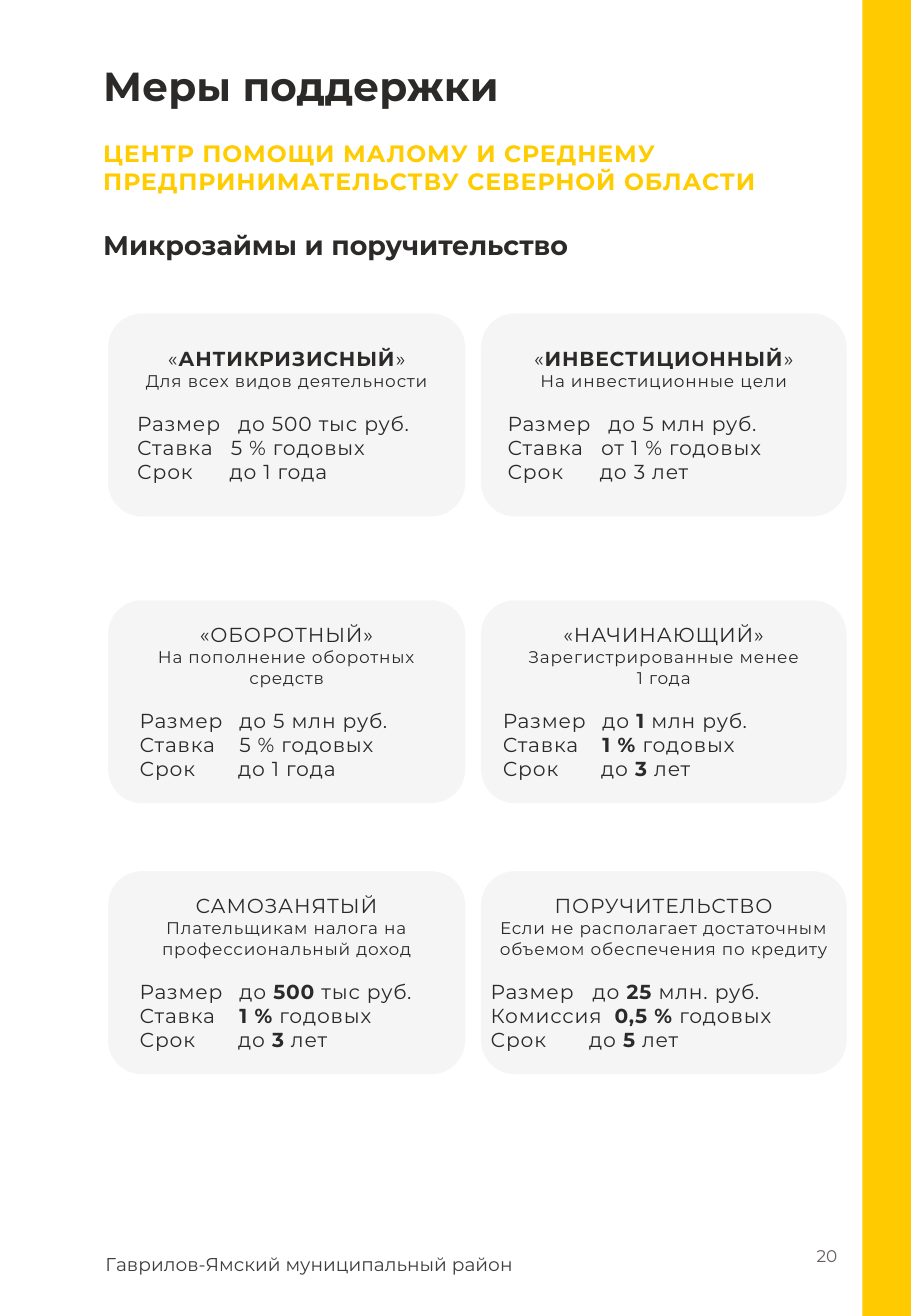
import dataclasses

import lxml.etree
import pptx
import pptx.dml.color
import pptx.enum.shapes
import pptx.enum.text
import pptx.oxml.ns
import pptx.util

COLUMNS, ROWS = 750, 1083
CELL = pptx.util.Inches(0.01)
ALIGN = pptx.enum.text.PP_ALIGN
MIDDLE = pptx.enum.text.MSO_ANCHOR.MIDDLE
SHAPES = pptx.enum.shapes.MSO_SHAPE


@dataclasses.dataclass(frozen=True)
class Theme:
    """Colours, type sizes and spacing of the slide."""

    font: str = "Montserrat"
    ink: str = "2B2A29"
    yellow: str = "FFCB00"
    heading: str = "FFCC00"
    card: str = "D9D9D9"
    card_opacity: int = 25
    number: str = "625F5D"
    footer: str = "3D3D3C"
    title_size: int = 24
    section_size: int = 16
    fund_size: int = 14
    body_size: int = 12
    footer_size: int = 11
    note_size: int = 10
    tracking: int = 50
    line_ratio: float = 1.22


@dataclasses.dataclass(frozen=True)
class Box:
    """A rectangle measured in grid columns and rows."""

    left: int
    top: int
    width: int
    height: int

    def lengths(self):
        """Return the four lengths for python-pptx."""
        return [round(part * CELL) for part in dataclasses.astuple(self)]


@dataclasses.dataclass(frozen=True)
class Loan:
    """The wording of one card, with bold parts between asterisks."""

    name: str
    notes: tuple
    terms: tuple
    tabs: tuple = (82, 82, 81)
    inset: int = 13
    text_height: int = 145


THEME = Theme()
TOP_TABS = (83, 77, 76)
LOANS = (
    Loan("«*АНТИКРИЗИСНЫЙ*»", ("Для всех видов деятельности",),
         (("Размер", "до 500 тыс руб."), ("Ставка", "5 % годовых"), ("Срок", "до 1 года")),
         TOP_TABS, 11, 128),
    Loan("«*ИНВЕСТИЦИОННЫЙ*»", ("На инвестиционные цели",),
         (("Размер", "до 5 млн руб."), ("Ставка", "от 1 % годовых"), ("Срок", "до 3 лет")),
         TOP_TABS, 9, 128),
    Loan("«ОБОРОТНЫЙ»", ("На пополнение оборотных средств",),
         (("Размер", "до 5 млн руб."), ("Ставка", "5 % годовых"), ("Срок", "до 1 года"))),
    Loan("«НАЧИНАЮЩИЙ»", ("Зарегистрированные менее", "1 года"),
         (("Размер", "до *1* млн руб."), ("Ставка", "*1 %* годовых"), ("Срок", "до *3* лет")),
         inset=5),
    Loan("САМОЗАНЯТЫЙ", ("Плательщикам налога на профессиональный доход",),
         (("Размер", "до *500* тыс руб."), ("Ставка", "*1 %* годовых"), ("Срок", "до *3* лет"))),
    Loan("ПОРУЧИТЕЛЬСТВО", ("Если не располагает достаточным объемом обеспечения по кредиту",),
         (("Размер", "до *25* млн. руб."), ("Комиссия", "*0,5 %* годовых"), ("Срок", "до *5* лет")),
         (84, 102, 81), -5),
)
CARD_COLUMNS = ((89, 294), (396, 301))
CARD_TOPS = (258, 494, 717)
CARD_HEIGHT = 167


def add_frame(page, box, margins=(0, 0), anchor=pptx.enum.text.MSO_ANCHOR.TOP):
    """Add a wrapping text box and return its text frame."""
    frame = page.shapes.add_textbox(*box.lengths()).text_frame
    frame.word_wrap = True
    frame.vertical_anchor = anchor
    frame.margin_left = frame.margin_right = margins[0] * CELL
    frame.margin_top = frame.margin_bottom = margins[1] * CELL
    return frame


def write(frame, text, size, color=THEME.ink, bold=False, align=ALIGN.LEFT,
          tracking=0, before=0, tab=None):
    """Write one paragraph; asterisks switch bold on and off."""
    para = frame.paragraphs[0]
    if para.runs:
        para = frame.add_paragraph()
    para.alignment = align
    if before:
        para.space_before = pptx.util.Pt(before)
    if tab:
        stops = lxml.etree.SubElement(para._p.get_or_add_pPr(), pptx.oxml.ns.qn("a:tabLst"))
        lxml.etree.SubElement(stops, pptx.oxml.ns.qn("a:tab"), pos=str(tab * CELL), algn="l")
    for index, part in enumerate(text.split("*")):
        if part:
            span = para.add_run()
            span.text = part
            span.font.name = THEME.font
            span.font.size = pptx.util.Pt(size)
            span.font.bold = bold or index % 2 == 1
            span.font.color.rgb = pptx.dml.color.RGBColor.from_string(color)
            span.font._element.set("spc", str(tracking))


def add_panel(page, box, kind, color, opacity=100):
    """Add a flat filled shape without an outline."""
    panel = page.shapes.add_shape(kind, *box.lengths())
    panel.shadow.inherit = False
    panel.line.fill.background()
    panel.fill.solid()
    panel.fill.fore_color.rgb = pptx.dml.color.RGBColor.from_string(color)
    if opacity < 100:
        tint = panel.fill._xPr.find(".//" + pptx.oxml.ns.qn("a:srgbClr"))
        lxml.etree.SubElement(tint, pptx.oxml.ns.qn("a:alpha"), val=str(opacity * 1000))


def add_header(page, box):
    """Add the title, the fund name and the section name."""
    title = add_frame(page, Box(box.left, box.top, box.width, 70))
    write(title, "Меры поддержки", THEME.title_size, bold=True)
    names = add_frame(page, Box(box.left, box.top + 64, box.width - 15, 101), anchor=MIDDLE)
    write(names, "ЦЕНТР ПОМОЩИ МАЛОМУ И СРЕДНЕМУ ПРЕДПРИНИМАТЕЛЬСТВУ СЕВЕРНОЙ ОБЛАСТИ",
          THEME.fund_size, color=THEME.heading, bold=True, tracking=THEME.tracking)
    write(names, "Микрозаймы и поручительство", THEME.section_size, bold=True,
          before=THEME.section_size * THEME.line_ratio)


def add_card(page, box, loan):
    """Add one rounded card with its loan terms."""
    add_panel(page, box, SHAPES.ROUNDED_RECTANGLE, THEME.card, THEME.card_opacity)
    inner = Box(box.left + loan.inset, box.top + (box.height - loan.text_height) / 2,
                box.width - 2 * loan.inset, loan.text_height)
    frame = add_frame(page, inner, (13, 7), MIDDLE)
    write(frame, loan.name, THEME.body_size, align=ALIGN.CENTER, tracking=THEME.tracking)
    for note in loan.notes:
        write(frame, note, THEME.note_size, align=ALIGN.CENTER, tracking=THEME.tracking)
    gaps = (THEME.note_size * THEME.line_ratio, 0, 0)
    for (label, value), tab, gap in zip(loan.terms, loan.tabs, gaps):
        write(frame, f"{label}\t{value}", THEME.body_size, tracking=THEME.tracking,
              before=gap, tab=tab)


def add_cards(page):
    """Place the loans row by row in the card grid."""
    for index, loan in enumerate(LOANS):
        row, column = divmod(index, len(CARD_COLUMNS))
        left, width = CARD_COLUMNS[column]
        add_card(page, Box(left, CARD_TOPS[row], width, CARD_HEIGHT), loan)


def add_footer(page, box):
    """Add the district name and the page number."""
    district = add_frame(page, Box(box.left, box.top + 22, 385, 29), (10, 5))
    write(district, "Гаврилов-Ямский муниципальный район", THEME.footer_size, color=THEME.footer)
    number = add_frame(page, Box(box.left + box.width - 169, box.top, 169, box.height),
                       (10, 5), MIDDLE)
    write(number, "20", THEME.note_size, color=THEME.number, align=ALIGN.RIGHT)


def main():
    """Build and save the slide."""
    deck = pptx.Presentation()
    deck.slide_width, deck.slide_height = COLUMNS * CELL, ROWS * CELL
    page = deck.slides.add_slide(deck.slide_layouts[6])
    add_panel(page, Box(710, 0, COLUMNS - 710, ROWS), SHAPES.RECTANGLE, THEME.yellow)
    add_header(page, Box(85, 50, 611, 165))
    add_cards(page)
    add_footer(page, Box(77, 1004, 622, 58))
    deck.save("out.pptx")


if __name__ == "__main__":
    main()
